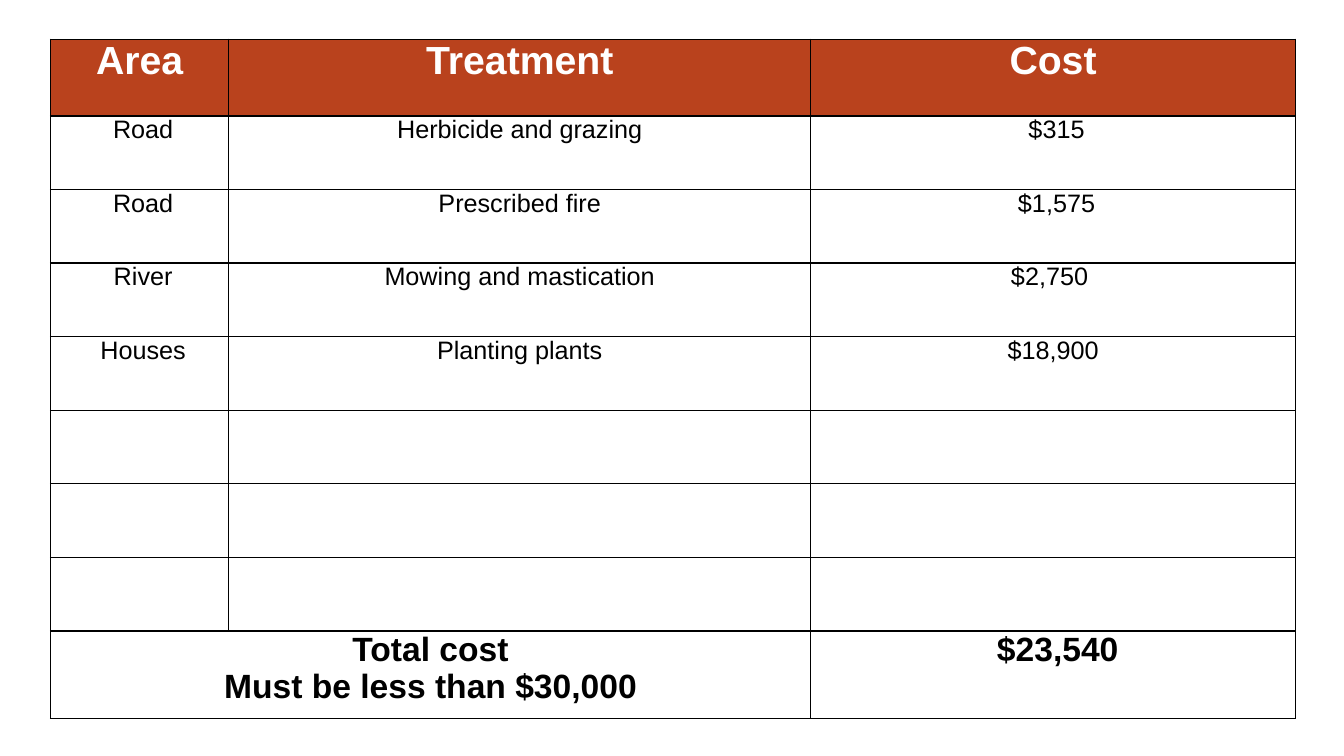
from pptx import Presentation
from pptx import util as u
from pptx.dml.color import RGBColor
from pptx.enum import text
from pptx.oxml import parse_xml
from pptx.oxml.ns import nsdecls

COLORS = {"header": "B9421D", "light": "FFFFFF", "dark": "000000"}
COLUMN_WIDTHS = [1.77, 5.77, 4.81]
ROW_HEIGHTS = [0.76] + [0.73] * 7 + [0.87]
COSTS = [
    ("Area", "Treatment", "Cost"),
    (" Road", "Herbicide and grazing", " $315"),
    (" Road", "Prescribed fire", " $1,575"),
    (" River", "Mowing and mastication", "$2,750 "),
    (" Houses", "Planting plants", "$18,900"),
    ("", "", ""),
    ("", "", ""),
    ("", "", ""),
    ("Total cost\nMust be less than $30,000", "", " $23,540"),
]


def write(frame, content, size=18, bold=False, color="dark"):
    """Fill a text frame with one centred paragraph per line of content."""
    frame.text = content
    for para in frame.paragraphs:
        para.alignment = text.PP_ALIGN.CENTER
        para.font.size = u.Pt(size)
        for span in para.runs:
            span.font.name = "Arial"
            span.font.size = u.Pt(size)
            span.font.bold = bold
            span.font.color.rgb = RGBColor.from_string(COLORS[color])


class CostSlide:
    def __init__(self, deck):
        self.page = deck.slides.add_slide(deck.slide_layouts[6])
        self.formats = {
            0: {"size": 28, "bold": True, "color": "light"},
            len(COSTS) - 1: {"size": 24, "bold": True},
        }

    def add_borders(self, cell):
        properties = cell._tc.get_or_add_tcPr()
        for side in ("lnL", "lnR", "lnT", "lnB"):
            properties.append(parse_xml(
                f'<a:{side} {nsdecls("a")} w="{u.Pt(1)}"><a:solidFill>'
                f'<a:srgbClr val="{COLORS["dark"]}"/></a:solidFill></a:{side}>'))

    def style_cell(self, cell, is_header):
        cell.margin_left = cell.margin_right = u.Inches(0.07)
        cell.margin_top = cell.margin_bottom = 0
        self.add_borders(cell)
        if is_header:
            cell.fill.solid()
            cell.fill.fore_color.rgb = RGBColor.from_string(COLORS["header"])
        else:
            cell.fill.background()

    def add_cost_table(self, left, top):
        table = self.page.shapes.add_table(
            len(COSTS), len(COLUMN_WIDTHS), u.Inches(left), u.Inches(top),
            u.Inches(sum(COLUMN_WIDTHS)), u.Inches(sum(ROW_HEIGHTS))).table
        table.first_row = table.horz_banding = False
        for column, width in zip(table.columns, COLUMN_WIDTHS):
            column.width = u.Inches(width)
        for index, (row, height) in enumerate(zip(table.rows, ROW_HEIGHTS)):
            row.height = u.Inches(height)
            for cell, content in zip(row.cells, COSTS[index]):
                self.style_cell(cell, is_header=index == 0)
                write(cell.text_frame, content, **self.formats.get(index, {}))
        total_row = len(COSTS) - 1
        table.cell(total_row, 0).merge(table.cell(total_row, 1))


def main():
    deck = Presentation()
    deck.slide_width, deck.slide_height = u.Inches(13.33), u.Inches(7.5)
    CostSlide(deck).add_cost_table(0.5, 0.39)
    deck.save("out.pptx")


if __name__ == "__main__":
    main()
